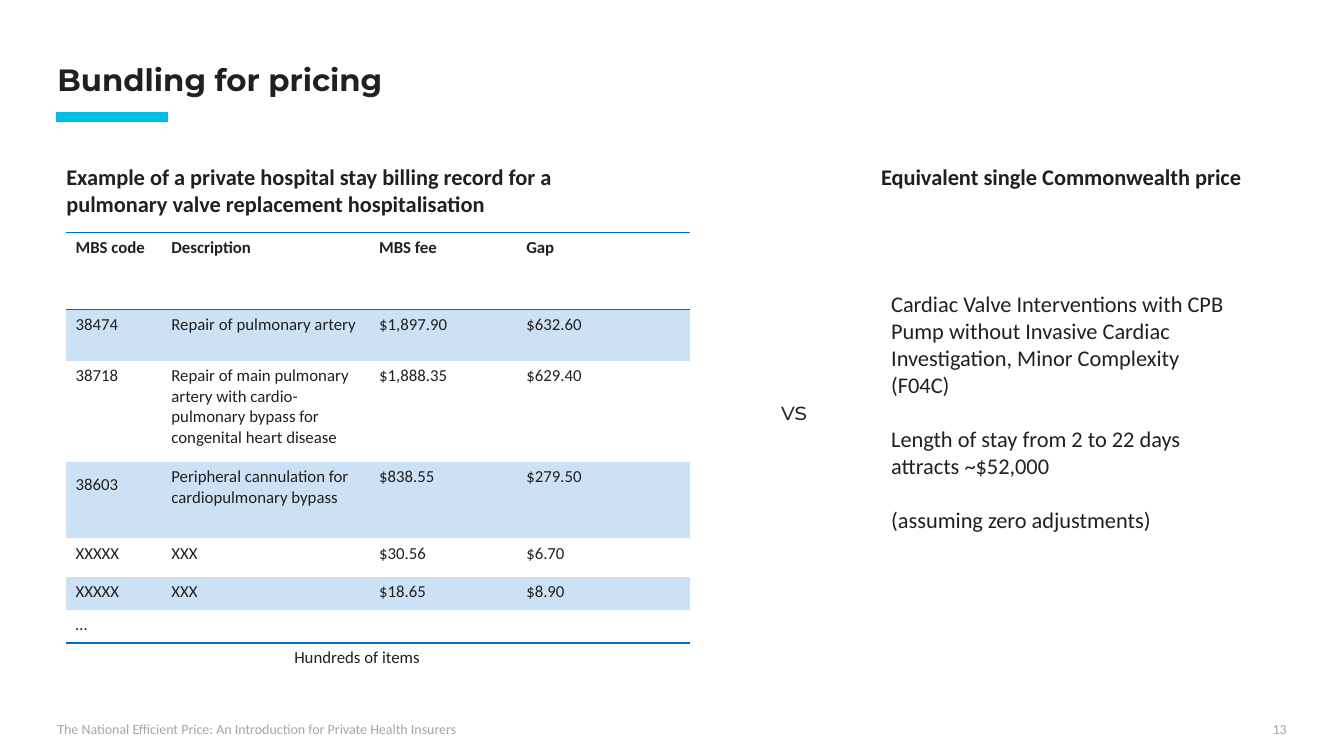
from lxml.etree import SubElement
from pptx import Presentation
from pptx.dml.color import RGBColor
from pptx.enum.shapes import MSO_CONNECTOR
from pptx.enum.text import MSO_ANCHOR, MSO_AUTO_SIZE, PP_ALIGN
from pptx.oxml import parse_xml
from pptx.oxml.ns import nsdecls, qn
from pptx.util import Inches, Pt

COLOURS = {
    "ink": "231F20",
    "muted": "A6A6A6",
    "accent": "00BEE6",
    "rule": "006EC8",
    "band": "CCE2F4",
}
BODY_FONT = "Calibri"
TITLE_FONT = "Montserrat"
PLAIN_TABLE_STYLE = "{2D5ABB26-0587-4C30-8999-92F81FD0307C}"

COLUMN_WIDTHS = [0.95, 2.06, 1.46, 1.72]
ROW_HEIGHTS = [0.76, 0.51, 1, 0.76, 0.38, 0.33, 0.33]
BILLING_ROWS = [
    ["MBS code", "Description", "MBS fee", "Gap"],
    ["38474", "Repair of pulmonary artery", "$1,897.90", "$632.60"],
    ["38718", "Repair of main pulmonary artery with cardio-pulmonary bypass "
              "for congenital heart disease", "$1,888.35", "$629.40"],
    ["38603", "Peripheral cannulation for cardiopulmonary bypass", "$838.55", "$279.50"],
    ["XXXXX", "XXX", "$30.56", "$6.70"],
    ["XXXXX", "XXX", "$18.65", "$8.90"],
    ["…", "", "", ""],
]
PRICE_PARAGRAPHS = [
    "Cardiac Valve Interventions with CPB Pump without Invasive Cardiac "
    "Investigation, Minor Complexity (F04C)",
    "Length of stay from 2 to 22 days attracts ~$52,000",
    "(assuming zero adjustments)",
]


def colour(name):
    return RGBColor.from_string(COLOURS[name])


class SlideBuilder:
    def __init__(self, presentation):
        self.slide = presentation.slides.add_slide(presentation.slide_layouts[5])

    def add_styled_run(self, paragraph, text, size, font=BODY_FONT, ink="ink", bold=False):
        run = paragraph.add_run()
        run.text = text
        run.font.name = font
        run.font.size = Pt(size)
        run.font.bold = bold
        run.font.color.rgb = colour(ink)

    def title(self, text, left, top, width, height):
        shape = self.slide.shapes.title
        shape.left, shape.top = Inches(left), Inches(top)
        shape.width, shape.height = Inches(width), Inches(height)
        frame = shape.text_frame
        frame.auto_size = MSO_AUTO_SIZE.NONE
        frame.vertical_anchor = MSO_ANCHOR.BOTTOM
        frame.margin_bottom = 0
        paragraph = frame.paragraphs[0]
        paragraph.alignment = PP_ALIGN.LEFT
        paragraph.line_spacing = 0.9
        self.add_styled_run(paragraph, text, 22, TITLE_FONT, bold=True)

    def text(self, texts, left, top, width, height, size, align=PP_ALIGN.LEFT,
             anchor=MSO_ANCHOR.TOP, gap=0, **style):
        box = self.slide.shapes.add_textbox(
            Inches(left), Inches(top), Inches(width), Inches(height))
        frame = box.text_frame
        frame.word_wrap = True
        frame.vertical_anchor = anchor
        for index, text in enumerate(texts):
            paragraph = frame.add_paragraph() if index else frame.paragraphs[0]
            paragraph.alignment = align
            if index:
                paragraph.space_before = Pt(gap)
            self.add_styled_run(paragraph, text, size, **style)

    def line(self, left, top, right, width, ink):
        connector = self.slide.shapes.add_connector(
            MSO_CONNECTOR.STRAIGHT, Inches(left), Inches(top), Inches(right), Inches(top))
        connector.line.color.rgb = colour(ink)
        connector.line.width = Pt(width)
        SubElement(connector._element.spPr, qn("a:effectLst"))

    def border(self, cell, sides):
        """Draw the named sides, given in the schema order T then B."""
        properties = cell._tc.get_or_add_tcPr()
        for index, side in enumerate(sides):
            properties.insert(index, parse_xml(
                f'<a:ln{side} {nsdecls("a")} w="{Pt(1)}"><a:solidFill>'
                f'<a:srgbClr val="{COLOURS["rule"]}"/></a:solidFill></a:ln{side}>'))

    def table(self, rows, left, top, widths, heights, size):
        table = self.slide.shapes.add_table(
            len(rows), len(widths), Inches(left), Inches(top),
            Inches(sum(widths)), Inches(sum(heights))).table
        table._tbl.tblPr.find(qn("a:tableStyleId")).text = PLAIN_TABLE_STYLE
        table.horz_banding = False
        for column, width in zip(table.columns, widths):
            column.width = Inches(width)
        borders = {0: "TB", len(rows) - 1: "B"}
        for row_index, (texts, height) in enumerate(zip(rows, heights)):
            table.rows[row_index].height = Inches(height)
            for column_index, text in enumerate(texts):
                cell = table.cell(row_index, column_index)
                if row_index % 2:
                    cell.fill.solid()
                    cell.fill.fore_color.rgb = colour("band")
                else:
                    cell.fill.background()
                self.border(cell, borders.get(row_index, ""))
                paragraph = cell.text_frame.paragraphs[0]
                if text:
                    self.add_styled_run(paragraph, text, size, bold=row_index == 0)
                else:
                    end = SubElement(paragraph._p, qn("a:endParaRPr"))
                    end.set("sz", str(size * 100))
        return table


def main():
    presentation = Presentation()
    presentation.slide_width = Inches(13.33)
    presentation.slide_height = Inches(7.5)
    builder = SlideBuilder(presentation)

    builder.title("Bundling for pricing", 0.47, 0.47, 12.39, 0.5)
    builder.line(0.56, 1.16, 1.67, 7, "accent")

    builder.text(["Example of a private hospital stay billing record for a "
                  "pulmonary valve replacement hospitalisation"],
                 0.56, 1.57, 5.46, 0.64, 16, bold=True)
    billing = builder.table(BILLING_ROWS, 0.65, 2.31, COLUMN_WIDTHS, ROW_HEIGHTS, 12)
    billing.cell(3, 0).margin_top = Inches(0.13)
    builder.text(["Hundreds of items"], 2.82, 6.37, 3.21, 0.3, 12)

    builder.text(["vs"], 7.65, 3.87, 0.92, 0.4, 18, font=TITLE_FONT)

    builder.text(["Equivalent single Commonwealth price"],
                 8.64, 1.57, 4.5, 0.37, 16, bold=True)
    builder.text(PRICE_PARAGRAPHS, 8.74, 2.83, 3.61, 2.79, 16, gap=19.5)

    builder.text(["The National Efficient Price: An Introduction for Private Health Insurers"],
                 0.47, 7.1, 8.09, 0.27, 10, anchor=MSO_ANCHOR.MIDDLE, ink="muted")
    builder.text(["13"], 9.86, 7.1, 3, 0.27, 10, align=PP_ALIGN.RIGHT, ink="muted")

    presentation.save("out.pptx")


if __name__ == "__main__":
    main()
